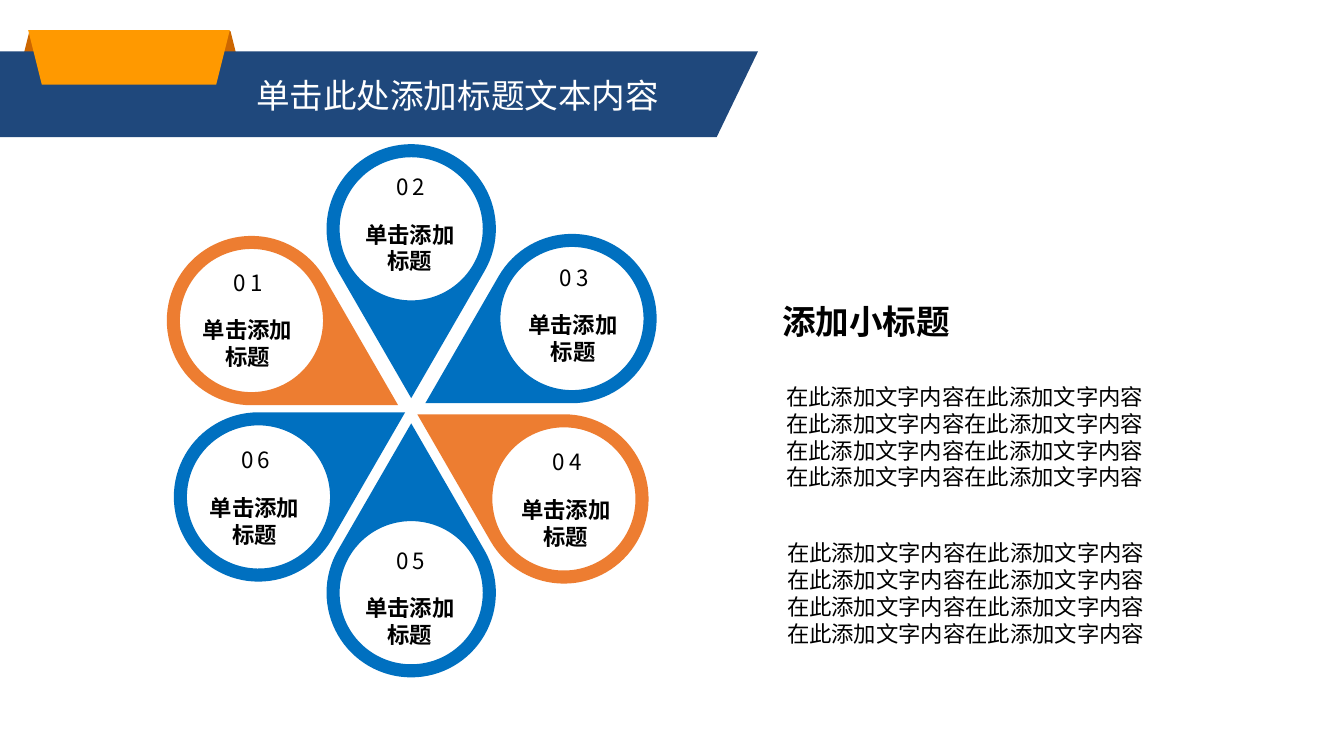
"""Build a slide with a six-petal diagram, a title ribbon and body text."""
from dataclasses import dataclass
from math import cos, radians, sin, tan

from lxml.etree import SubElement
from pptx import Presentation
from pptx.dml.color import RGBColor
from pptx.enum.lang import MSO_LANGUAGE_ID as Language
from pptx.enum.shapes import MSO_SHAPE as Preset
from pptx.enum.text import MSO_ANCHOR as Anchor, MSO_AUTO_SIZE as AutoSize, PP_ALIGN as Align
from pptx.oxml.ns import qn
from pptx.shapes.base import BaseShape
from pptx.slide import Slide
from pptx.util import Inches, Pt

BLUE = RGBColor(0x00, 0x70, 0xC0)
ORANGE = RGBColor(0xED, 0x7D, 0x31)
NAVY = RGBColor(0x1F, 0x48, 0x7C)
RIBBON_ORANGE = RGBColor(0xFF, 0x99, 0x00)
RIBBON_FOLD = RGBColor(0xCC, 0x66, 0x00)
WHITE = RGBColor(0xFF, 0xFF, 0xFF)
BLACK = RGBColor(0x00, 0x00, 0x00)

SANS = "Noto Sans CJK SC"
SANS_JP = "Noto Sans CJK JP"
PETAL_RADIUS = 0.84
HOLE_RADIUS = 0.71
SENTENCE = "在此添加文字内容"
BODY_LINES = [SENTENCE * 4, SENTENCE * 2, SENTENCE * 2]

Point = tuple[float, float]
Box = tuple[float, float, float, float]


@dataclass(frozen=True)
class Petal:
    number: str
    angle: int
    tip: Point
    label: Point
    color: RGBColor = BLUE
    font: str = SANS


@dataclass(frozen=True)
class TextBlock:
    box: Box
    lines: list[str]
    size: int = 16
    bold: bool = False


PETALS = [
    Petal("01", 210, (3.95, 4.02), (1.91, 2.62), ORANGE),
    Petal("04", 30, (4.14, 4.11), (5.07, 4.4), ORANGE),
    Petal("06", 150, (4.02, 4.09), (1.98, 4.38), font=SANS_JP),
    Petal("03", -30, (4.22, 4), (5.14, 2.57)),
    Petal("02", -90, (4.08, 3.95), (3.52, 1.67)),
    Petal("05", 90, (4.08, 4.2), (3.52, 5.38)),
]

TEXT_BLOCKS = [
    TextBlock((7.7, 3.75, 3.89, 1.95), BODY_LINES),
    TextBlock((7.71, 5.3, 3.87, 1.18), BODY_LINES),
    TextBlock((7.66, 2.94, 3.49, 0.5), ["添加小标题"], size=24, bold=True),
]


def place(shape: BaseShape, box: Box) -> None:
    shape.left, shape.top, shape.width, shape.height = map(Inches, box)


def write_text(shape: BaseShape, lines: list[str], *, size: int = 16, font: str = SANS,
               color: RGBColor = BLACK, bold: bool = False, align: Align = Align.LEFT,
               spacing: int = 0, wrap: bool = True) -> None:
    frame = shape.text_frame
    frame.word_wrap = wrap
    frame.auto_size = AutoSize.SHAPE_TO_FIT_TEXT
    frame.vertical_anchor = Anchor.TOP
    frame.text = "\n".join(lines)
    for paragraph in frame.paragraphs:
        paragraph.alignment = align
        run = paragraph.runs[0]
        run.font.size, run.font.bold, run.font.name = Pt(size), bold, font
        run.font.color.rgb = color
        run.font.language_id = Language.SIMPLIFIED_CHINESE
        properties = run.font._element
        SubElement(properties, qn("a:ea")).set("typeface", font)
        if spacing:
            properties.set("spc", str(spacing * 100))


def add_text(slide: Slide, box: Box, lines: list[str], **text_format) -> None:
    text_box = slide.shapes.add_textbox(*map(Inches, box))
    write_text(text_box, lines, **text_format)


def paint(shape: BaseShape, color: RGBColor) -> None:
    shape.fill.solid()
    shape.fill.fore_color.rgb = color
    shape.line.fill.background()
    shape.shadow.inherit = False


def add_outline(slide: Slide, contours: list[list[Point]], color: RGBColor) -> BaseShape:
    scaled = [[(Inches(x), Inches(y)) for x, y in contour] for contour in contours]
    builder = slide.shapes.build_freeform(*scaled[0][0])
    builder.add_line_segments(scaled[0][1:], close=True)
    for contour in scaled[1:]:
        builder.move_to(*contour[0])
        builder.add_line_segments(contour[1:], close=True)
    outline = builder.convert_to_shape()
    paint(outline, color)
    return outline


def polar(center: Point, radius: float, angle: float) -> Point:
    return center[0] + radius * cos(radians(angle)), center[1] + radius * sin(radians(angle))


def arc_controls(center: Point, radius: float, start: int, sweep: int) -> list[Point]:
    """Return the start of an arc and the control points of its four curves."""
    step = sweep / 4
    handle = radius * 4 / 3 * tan(radians(step / 4))
    points = [polar(center, radius, start)]
    for index in range(4):
        begin = start + index * step
        end = begin + step
        finish = polar(center, radius, end)
        points += [polar(points[-1], handle, begin + 90), polar(finish, handle, end - 90), finish]
    return points


def bend_outline(outline: BaseShape) -> None:
    """Join each full group of three line segments into one curve."""
    segments = []
    for command in list(outline.element.iter(qn("a:moveTo"), qn("a:lnTo"))):
        segments = [*segments, command] if command.tag == qn("a:lnTo") else []
        if len(segments) == 3:
            curve = SubElement(command.getparent(), qn("a:cubicBezTo"))
            segments[0].addprevious(curve)
            for segment in segments:
                curve.append(segment[0])
                segment.getparent().remove(segment)
            segments = []


def add_petal(slide: Slide, petal: Petal) -> None:
    center = polar(petal.tip, 2 * PETAL_RADIUS, petal.angle)
    rim = arc_controls(center, PETAL_RADIUS, petal.angle - 120, 240)
    hole = arc_controls(center, HOLE_RADIUS, petal.angle, 360)
    bend_outline(add_outline(slide, [[*rim, petal.tip], hole], petal.color))
    left, top = petal.label
    add_text(slide, (left, top, 1.11, 0.37), [petal.number],
             font=petal.font, align=Align.CENTER, spacing=3)
    add_text(slide, (left - 0.01, top + 0.47, 1.11, 0.64), ["单击添加标题"],
             bold=True, align=Align.CENTER)


def add_trapezoid(slide: Slide, box: Box, color: RGBColor, flipped: bool = False) -> None:
    trapezoid = slide.shapes.add_shape(Preset.TRAPEZOID, *map(Inches, box))
    paint(trapezoid, color)
    if flipped:
        trapezoid.element.spPr.find(qn("a:xfrm")).set("flipV", "1")


def add_title_ribbon(slide: Slide) -> None:
    add_trapezoid(slide, (0.16, 0.31, 2.26, 0.53), RIBBON_FOLD)
    add_outline(slide, [[(0, 0.51), (7.52, 0.51), (7.11, 1.36), (0, 1.36)]], NAVY)
    add_trapezoid(slide, (0.28, 0.3, 2, 0.54), RIBBON_ORANGE, flipped=True)
    title = slide.shapes.title
    slide.shapes.element.append(title.element)
    place(title, (2.41, 0.67, 4.31, 0.54))
    write_text(title, ["单击此处添加标题文本内容"], size=24, font="Arial", color=WHITE, wrap=False)
    frame = title.text_frame
    frame.margin_left = frame.margin_right = Inches(0.13)
    frame.margin_top = frame.margin_bottom = Inches(0.07)


def main() -> None:
    presentation = Presentation()
    presentation.slide_width, presentation.slide_height = Inches(40 / 3), Inches(7.5)
    slide = presentation.slides.add_slide(presentation.slide_layouts[5])
    for block in TEXT_BLOCKS:
        add_text(slide, block.box, block.lines, size=block.size, bold=block.bold)
    for petal in PETALS:
        add_petal(slide, petal)
    add_title_ribbon(slide)
    presentation.save("out.pptx")


if __name__ == "__main__":
    main()
